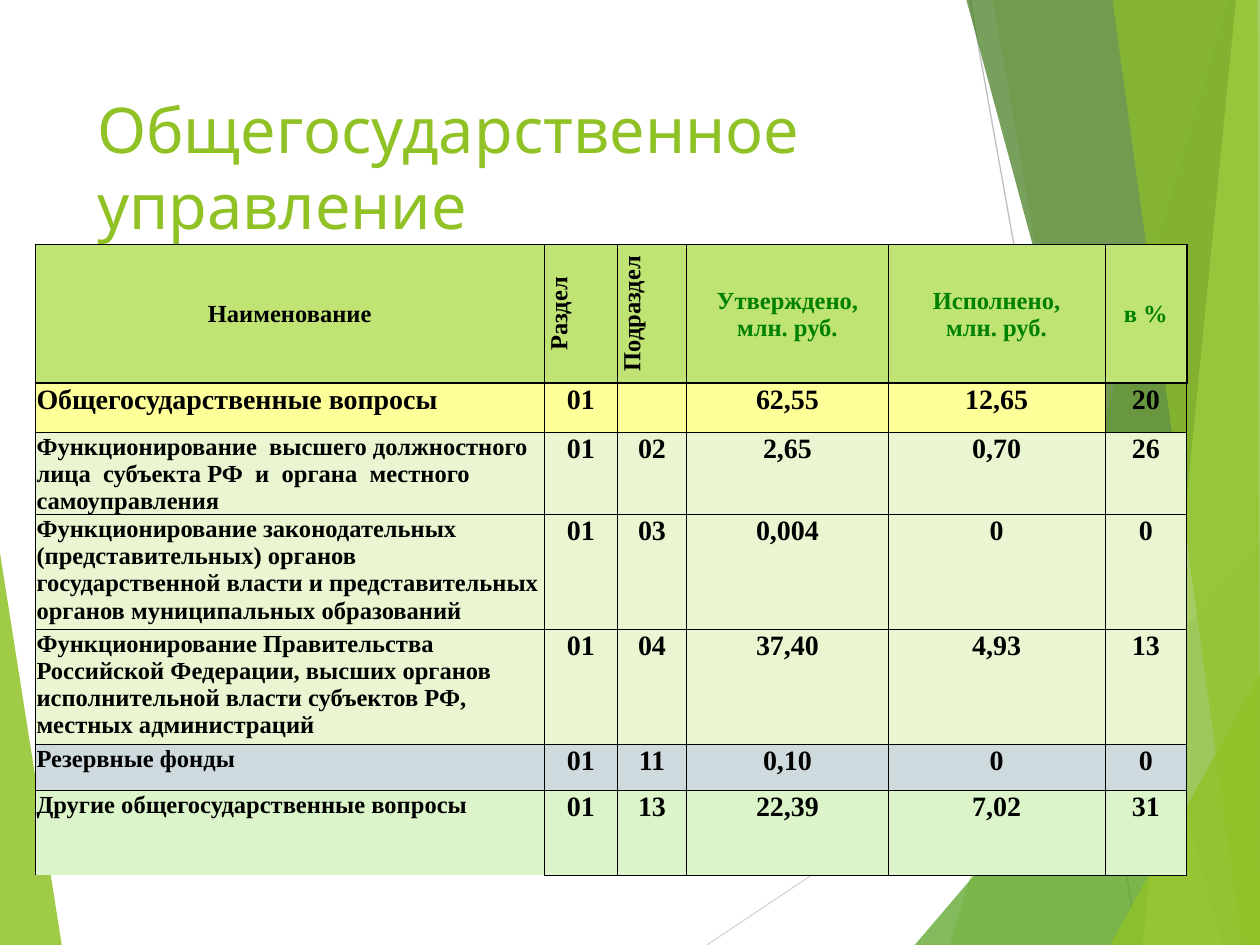
from dataclasses import dataclass

from lxml import etree
from pptx import Presentation
from pptx import util as u
from pptx.dml.color import RGBColor
from pptx.enum import shapes, text
from pptx.oxml.ns import qn

BLACK = RGBColor(0x00, 0x00, 0x00)
WHITE = RGBColor(0xFF, 0xFF, 0xFF)
GREEN = RGBColor(0x90, 0xC2, 0x26)
LEAF = RGBColor(0x54, 0xA0, 0x21)
MOSS = RGBColor(0x3F, 0x78, 0x19)
LIME = RGBColor(0xC0, 0xE4, 0x74)
INK = RGBColor(0x00, 0x80, 0x00)
SILVER = RGBColor(0xD9, 0xD9, 0xD9)
GRAY = RGBColor(0xBF, 0xBF, 0xBF)
YELLOW = RGBColor(0xFF, 0xFF, 0x99)
PALE = RGBColor(0xEA, 0xF6, 0xD1)
STEEL = RGBColor(0xCF, 0xDA, 0xDF)
MINT = RGBColor(0xDB, 0xF4, 0xCA)
SERIF = "Times New Roman"


@dataclass
class Facet:
    points: list[tuple[float, float]]
    color: RGBColor
    alpha: int


@dataclass
class Ray:
    start: tuple[float, float]
    end: tuple[float, float]
    color: RGBColor


@dataclass
class Row:
    height: float
    fill: RGBColor
    cells: list[str]
    size: int = 14


# Background decoration, back to front
DECOR = [
    Facet([(0, 4.39), (0.49, 7.5), (0, 7.5)], GREEN, 85),
    Ray((5.61, 7.5), (10, 4.57), SILVER),
    Ray((7.7, 0), (9.04, 7.5), GRAY),
    Facet([(9.75, 0), (7.54, 7.5), (10, 7.5), (10, 0)], GREEN, 30),
    Facet([(7.88, 0), (9.19, 7.5), (10, 7.5), (10, 0)], GREEN, 20),
    Facet([(7.26, 7.5), (10, 4.29), (10, 7.5)], LEAF, 72),
    Facet([(7.67, 0), (9.7, 7.5), (10, 7.5), (10, 0)], MOSS, 70),
    Facet([(9.81, 0), (9.07, 7.5), (10, 7.5), (10, 0)], LIME, 70),
    Facet([(8.83, 0), (9.86, 7.5), (10, 7.5), (9.98, 0)], GREEN, 65),
    Facet([(8.81, 7.5), (10, 5.35), (10, 7.5)], GREEN, 80),
]

# Budget table
COLS = [4.04, 0.58, 0.55, 1.6, 1.72, 0.65]
ROWS = [
    Row(1.1, LIME, ["Наименование", "Раздел", "Подраздел",
                    "Утверждено,\nмлн. руб.", "Исполнено,\nмлн. руб.", "в %"]),
    Row(0.39, YELLOW, ["Общегосударственные вопросы",
                       "01", "", "62,55", "12,65", "20"], 16),
    Row(0.65, PALE, ["Функционирование  высшего должностного  лица  субъекта РФ"
                     "  и  органа  местного  самоуправления",
                     "01", "02", "2,65", "0,70", "26"]),
    Row(0.91, PALE, ["Функционирование законодательных (представительных) органов "
                     "государственной власти и представительных органов "
                     "муниципальных образований",
                     "01", "03", "0,004", "0", "0"]),
    Row(0.91, PALE, ["Функционирование Правительства Российской Федерации, "
                     "высших органов исполнительной власти субъектов РФ, "
                     "местных администраций",
                     "01", "04", "37,40", "4,93", "13"]),
    Row(0.37, STEEL, ["Резервные фонды", "01", "11", "0,10", "0", "0"]),
    Row(0.67, MINT, ["Другие общегосударственные вопросы",
                     "01", "13", "22,39", "7,02", "31"]),
]


def draw_facet(slide, facet: Facet) -> None:
    first, *rest = [(u.Inches(x), u.Inches(y)) for x, y in facet.points]
    pen = slide.shapes.build_freeform(*first)
    pen.add_line_segments(rest, close=True)
    shape = pen.convert_to_shape()
    shape.shadow.inherit = False
    shape.line.fill.background()
    shape.fill.solid()
    shape.fill.fore_color.rgb = facet.color
    tint = shape.element.spPr.find(".//" + qn("a:srgbClr"))
    etree.SubElement(tint, qn("a:alpha"), val=str(facet.alpha * 1000))


def draw_ray(slide, ray: Ray) -> None:
    ends = [u.Inches(n) for n in ray.start + ray.end]
    line = slide.shapes.add_connector(shapes.MSO_CONNECTOR.STRAIGHT, *ends)
    line.line.color.rgb = ray.color
    line.line.width = u.Pt(0.75)
    etree.SubElement(line.element.spPr, qn("a:effectLst"))


def set_edge(cell, side: str, width: float) -> None:
    props = cell._tc.get_or_add_tcPr()
    edge = etree.SubElement(props, qn("a:ln" + side), w=str(u.Pt(width)))
    if width:
        fill = etree.SubElement(edge, qn("a:solidFill"))
        etree.SubElement(fill, qn("a:srgbClr"), val=str(BLACK))
    else:
        etree.SubElement(edge, qn("a:noFill"))


def set_edges(cell, r: int, c: int) -> None:
    head, last = r == 0, r == len(ROWS) - 1
    left = 1 if (c == 0 and r != 1) or (head and c == 1) else 0.5
    right = 1 if head and c in (0, len(COLS) - 1) else 0.5
    top = 1 if r < 2 else 0.5
    bottom = 1 if head else 0 if last and c == 0 else 0.5
    for side, width in zip("LRTB", (left, right, top, bottom)):
        set_edge(cell, side, width)


def fill_cell(cell, row: Row, r: int, c: int) -> None:
    head = r == 0
    set_edges(cell, r, c)
    if (r, c) == (1, len(COLS) - 1):
        cell.fill.background()
    else:
        cell.fill.solid()
        cell.fill.fore_color.rgb = row.fill
    cell.margin_left = cell.margin_right = cell.margin_top = u.Inches(0.01)
    cell.margin_bottom = 0
    cell.vertical_anchor = text.MSO_ANCHOR.MIDDLE if head else text.MSO_ANCHOR.TOP
    if head and c in (1, 2):
        cell._tc.get_or_add_tcPr().set("vert", "vert270")
    cell.text = row.cells[c]
    for para in cell.text_frame.paragraphs:
        para.alignment = (text.PP_ALIGN.CENTER if head or c
                          else text.PP_ALIGN.LEFT)
        para.font.name = SERIF
        para.font.size = u.Pt(row.size if head or c == 0 else 16)
        para.font.bold = True
        para.font.color.rgb = INK if head and c > 2 else BLACK


def draw_table(slide) -> None:
    high = sum(row.height for row in ROWS)
    frame = slide.shapes.add_table(
        len(ROWS), len(COLS), u.Inches(0.28), u.Inches(1.94),
        u.Inches(sum(COLS)), u.Inches(high))
    table = frame.table
    for col, width in zip(table.columns, COLS):
        col.width = u.Inches(width)
    for r, row in enumerate(ROWS):
        table.rows[r].height = u.Inches(row.height)
        for c in range(len(COLS)):
            fill_cell(table.cell(r, c), row, r, c)


def set_title(slide) -> None:
    title = slide.shapes.title
    title.left, title.top = u.Inches(0.67), u.Inches(0.67)
    title.width, title.height = u.Inches(6.94), u.Inches(1.44)
    frame = title.text_frame
    frame.text = "Общегосударственное управление"
    frame.word_wrap = True
    frame.auto_size = text.MSO_AUTO_SIZE.NONE
    frame.vertical_anchor = text.MSO_ANCHOR.TOP
    para = frame.paragraphs[0]
    para.alignment = text.PP_ALIGN.LEFT
    para.font.name = "Karla"
    para.font.size = u.Pt(36)
    para.font.color.rgb = GREEN
    # Bring the title in front of the decoration
    title.element.getparent().append(title.element)


def main() -> None:
    deck = Presentation()
    deck.slide_width, deck.slide_height = u.Inches(10), u.Inches(7.5)
    slide = deck.slides.add_slide(deck.slide_layouts[5])
    slide.background.fill.solid()
    slide.background.fill.fore_color.rgb = WHITE
    for part in DECOR:
        if isinstance(part, Facet):
            draw_facet(slide, part)
        else:
            draw_ray(slide, part)
    set_title(slide)
    draw_table(slide)
    deck.save("out.pptx")


if __name__ == "__main__":
    main()
